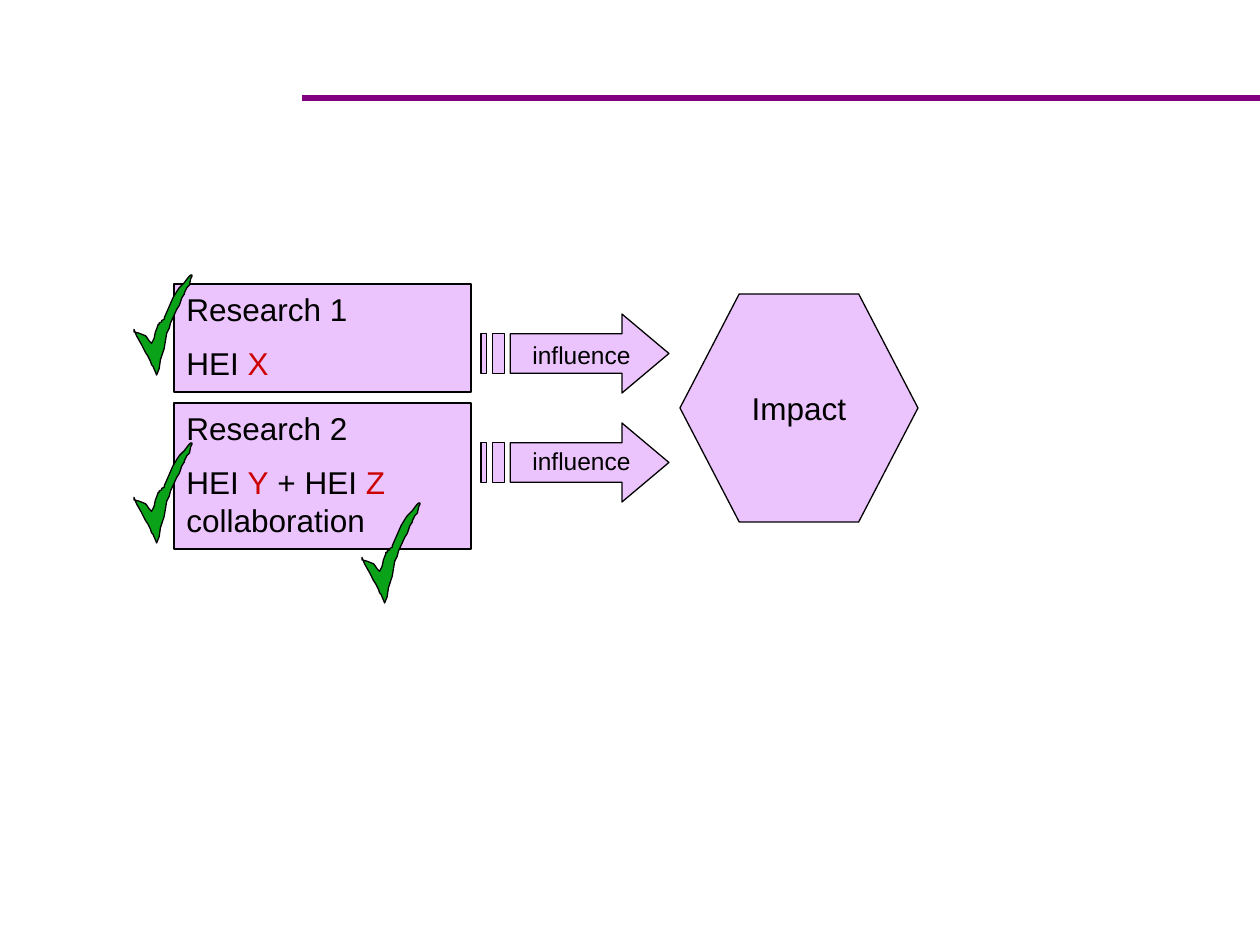
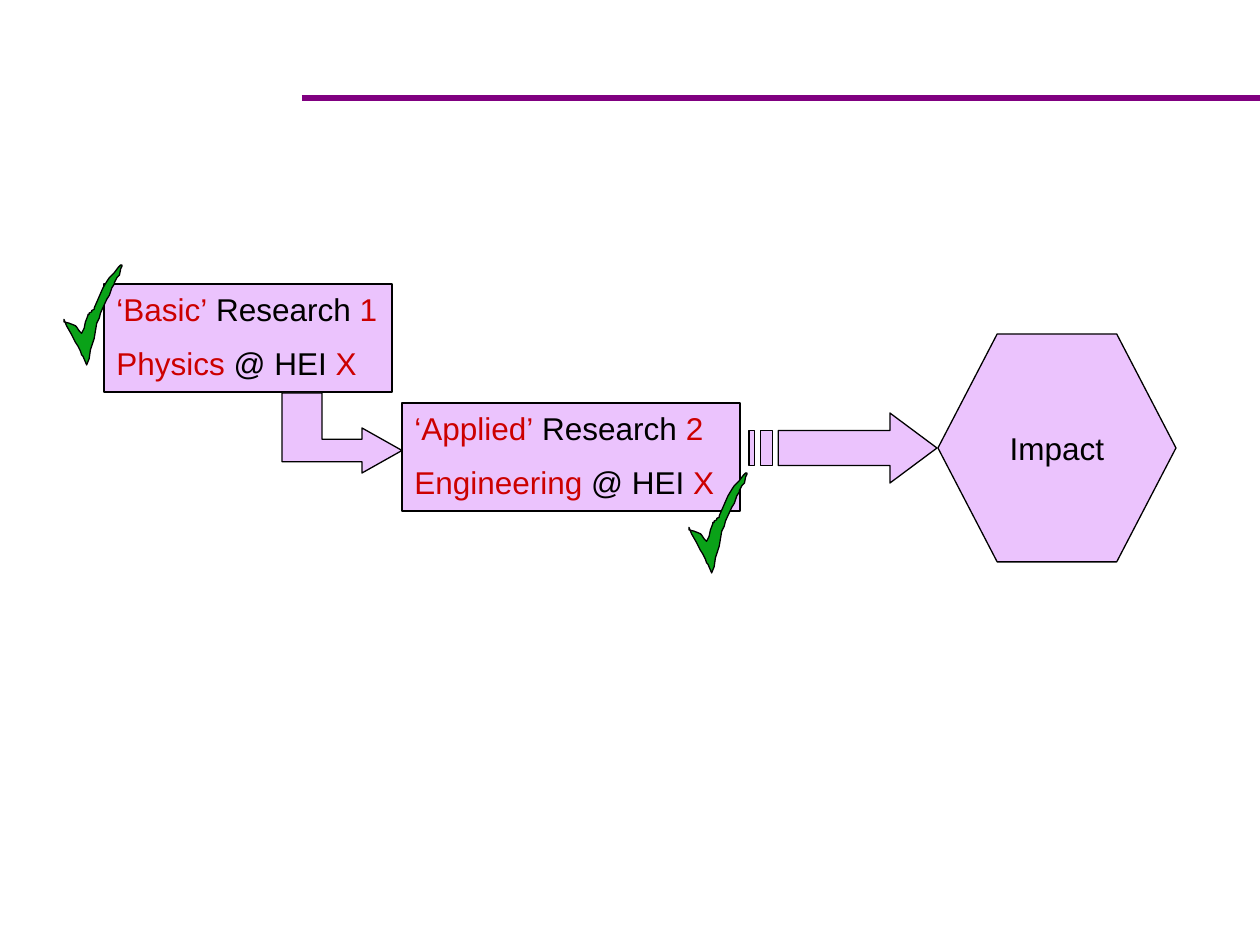
from lxml.etree import SubElement
from pptx import Presentation
from pptx.dml.color import RGBColor
from pptx.enum.shapes import MSO_CONNECTOR as Connector, MSO_SHAPE as Shape
from pptx.enum.text import MSO_ANCHOR as Anchor, PP_ALIGN as Align
from pptx.oxml.ns import qn
from pptx.util import Emu, Pt

PX = 914400 / 126
WIDTH, HEIGHT = 1260, 945
FONT = "Arial"
COLORS = {
    "rule": "800080",
    "panel": "EBC3FD",
    "ink": "000000",
    "accent": "CC0000",
    "tick": "0AA218",
}

# Outlines, each on its own grid: (grid width, grid height, contours)
STRIPED_ARROW = (32, 4, [
    [(0, 1), (0, 3), (1, 3), (1, 1)],
    [(2, 1), (2, 3), (4, 3), (4, 1)],
    [(24, 0), (24, 1), (5, 1), (5, 3), (24, 3), (24, 4), (32, 2)],
])
BENT_ARROW = (96, 64, [
    [(0, 0), (0, 55), (64, 55), (64, 64), (96, 46), (64, 28), (64, 37),
     (32, 37), (32, 0)],
])
TICK = (46, 79, [
    [(0, 43), (2, 48), (6, 55), (9, 61), (11, 64), (13, 68), (14, 71),
     (15, 72), (18, 79), (20, 74), (21, 67), (24, 58), (26, 46), (27, 44),
     (28, 42), (29, 38), (34, 27), (36, 24), (38, 18), (40, 15), (40, 14),
     (42, 10), (44, 8), (45, 3), (46, 1), (46, 0), (45, 0), (43, 2), (40, 6),
     (36, 10), (34, 13), (31, 18), (24, 34), (24, 35), (22, 36), (22, 37),
     (20, 38), (20, 39), (19, 39), (19, 40), (17, 45), (16, 50), (14, 54),
     (12, 52), (10, 49), (9, 48), (4, 46), (0, 45)],
])


def emu(*lengths):
    return [Emu(round(length * PX)) for length in lengths]


def rgb(name):
    return RGBColor.from_string(COLORS[name])


class Deck:
    """Holds the shared style and the slide being drawn."""

    def __init__(self):
        self.prs = Presentation()
        self.prs.slide_width, self.prs.slide_height = emu(WIDTH, HEIGHT)
        self.layout = self.prs.slide_layouts[6]
        self.slide = None

    def new_slide(self):
        self.slide = self.prs.slides.add_slide(self.layout)

    def header_rule(self, left, y):
        """Draw the rule and move it to the layout, shared by all slides."""
        rule = self.slide.shapes.add_connector(
            Connector.STRAIGHT, *emu(left, y, WIDTH, y))
        rule.line.color.rgb = rgb("rule")
        rule.line.width = Pt(3)
        SubElement(rule.element.spPr, qn("a:effectLst"))
        self.layout.shapes.element.append(rule.element)

    def paint(self, shape, fill):
        shape.shadow.inherit = False
        shape.fill.solid()
        shape.fill.fore_color.rgb = rgb(fill)
        shape.line.color.rgb = rgb("ink")
        shape.line.width = Pt(0.75)

    def set_lines(self, shape, lines, size=18, align=Align.LEFT,
                  anchor=Anchor.TOP, wrap=True):
        """Fill a shape with lines; the parts between asterisks are accented."""
        frame = shape.text_frame
        frame.word_wrap = wrap
        frame.vertical_anchor = anchor
        for i, line in enumerate(lines):
            para = frame.add_paragraph() if i else frame.paragraphs[0]
            para.alignment = align
            para.space_before = Pt(size / 2 if i else 0)
            for j, part in enumerate(line.split("*")):
                if part:
                    run = para.add_run()
                    run.text = part
                    run.font.name = FONT
                    run.font.size = Pt(size)
                    run.font.color.rgb = rgb("accent" if j % 2 else "ink")

    def research(self, left, top, width, height, *lines):
        box = self.slide.shapes.add_shape(
            Shape.RECTANGLE, *emu(left, top, width, height))
        self.paint(box, "panel")
        self.set_lines(box, lines)

    def impact(self, left, top):
        hexagon = self.slide.shapes.add_shape(
            Shape.HEXAGON, *emu(left, top, 238, 228))
        hexagon.adjustments[0] = 0.26
        self.paint(hexagon, "panel")
        self.set_lines(hexagon, ["Impact"], align=Align.CENTER,
                       anchor=Anchor.MIDDLE, wrap=False)

    def label(self, left, top, text):
        box = self.slide.shapes.add_textbox(*emu(left, top, 124, 42))
        self.set_lines(box, [text], size=14, wrap=False)

    def outline(self, drawing, left, top, width, height, fill="panel"):
        columns, rows, contours = drawing
        scale = (width * PX / columns, height * PX / rows)
        builder = self.slide.shapes.build_freeform(*contours[0][0], scale)
        for i, contour in enumerate(contours):
            if i:
                builder.move_to(*contour[0])
            builder.add_line_segments(contour[1:], close=True)
        self.paint(builder.convert_to_shape(*emu(left, top)), fill)

    def tick(self, left, top):
        self.outline(TICK, left, top, 58, 100, "tick")


def separate_research(deck):
    """Two pieces of research, each influencing the impact."""
    deck.new_slide()
    deck.header_rule(302, 98)
    deck.research(174, 284, 297, 108, "Research 1", "HEI *X*")
    deck.research(174, 403, 297, 146, "Research 2",
                  "HEI *Y* + HEI *Z* collaboration")
    for arrow_top, label_top in ((314, 334), (423, 440)):
        deck.outline(STRIPED_ARROW, 481, arrow_top, 188, 79)
        deck.label(520, label_top, "influence")
    deck.impact(680, 294)
    for corner in ((134, 275), (134, 443), (362, 503)):
        deck.tick(*corner)


def basic_to_applied(deck):
    """Basic research leading to applied research, then to impact."""
    deck.new_slide()
    deck.outline(STRIPED_ARROW, 749, 413, 188, 70)
    deck.research(104, 284, 288, 108, "*‘Basic’* Research *1*",
                  "*Physics* @ HEI *X*")
    deck.research(402, 403, 338, 108, "*‘Applied’* Research *2*",
                  "*Engineering* @ HEI *X*")
    deck.impact(938, 334)
    deck.outline(BENT_ARROW, 282, 393, 120, 80)
    for corner in ((64, 265), (689, 473)):
        deck.tick(*corner)


def main():
    deck = Deck()
    separate_research(deck)
    basic_to_applied(deck)
    deck.prs.save("out.pptx")


if __name__ == "__main__":
    main()
